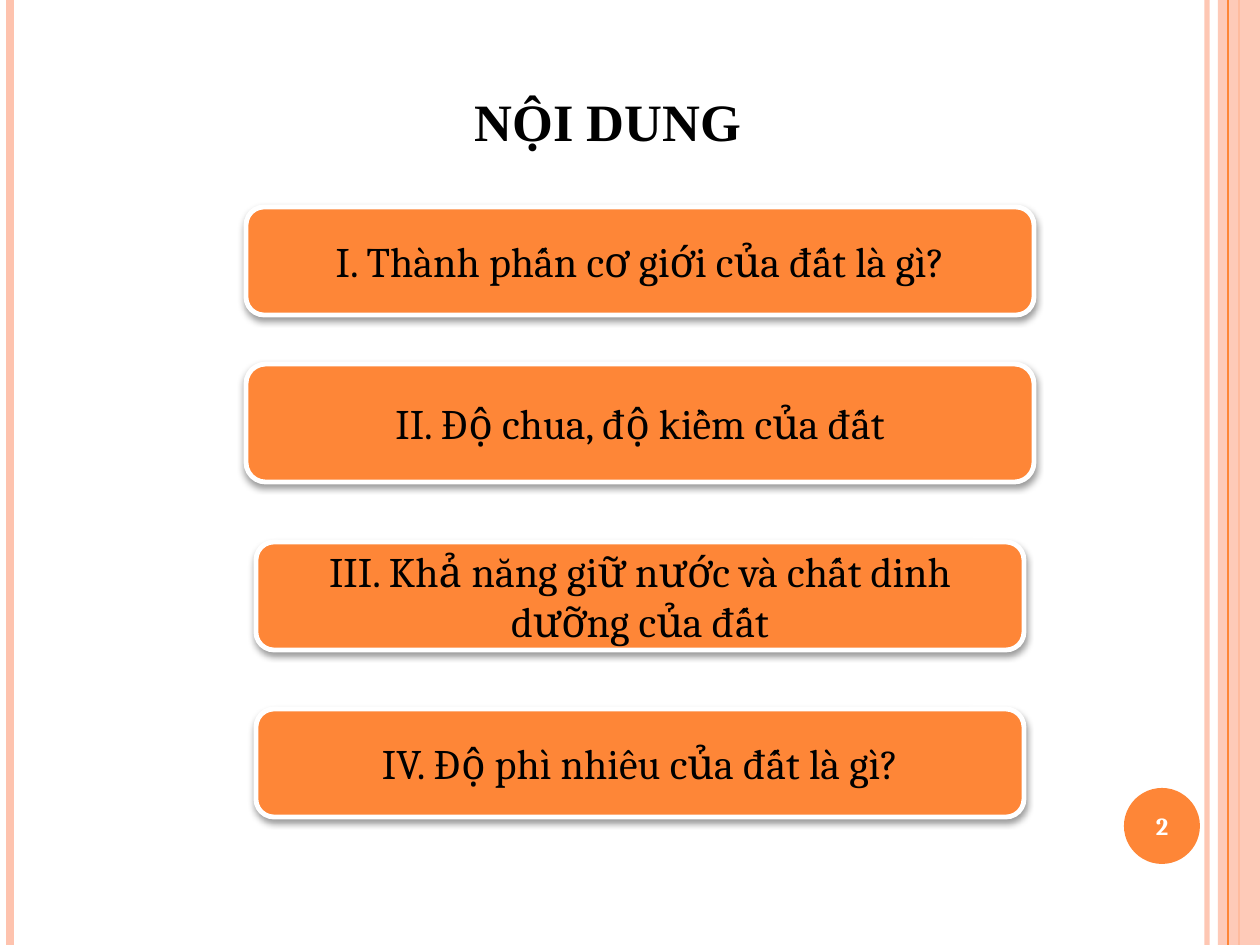
from lxml.etree import SubElement
from pptx import Presentation
from pptx.dml.color import RGBColor
from pptx.enum.shapes import MSO_CONNECTOR, MSO_SHAPE
from pptx.enum.text import MSO_ANCHOR, PP_ALIGN
from pptx.oxml import parse_xml
from pptx.oxml.ns import nsdecls, qn
from pptx.util import Pt

PX = 914400 / 126
WIDTH, HEIGHT = 1260, 945
COLORS = {"orange": "FE8637", "peach": "FEC3AE", "white": "FFFFFF", "black": "000000"}


def emu(*lengths):
    return [round(length * PX) for length in lengths]


def set_color(color_format, name, opacity=100):
    color_format.rgb = RGBColor.from_string(COLORS[name])
    if opacity < 100:
        # The srgbClr element is the only child of the solid fill
        solid = color_format._xFill
        SubElement(solid[0], qn("a:alpha"), val=str(opacity * 1000))


presentation = Presentation()
presentation.slide_width, presentation.slide_height = emu(WIDTH, HEIGHT)
slide = presentation.slides.add_slide(presentation.slide_layouts[5])
shapes = slide.shapes

# Vertical lines and the band on the right edge
band = shapes.add_shape(MSO_SHAPE.RECTANGLE, *emu(1218, 0, 42, HEIGHT))
band.shadow.inherit = False
band.fill.solid()
band.fill.fore_color.rgb = RGBColor.from_string(COLORS["peach"])
SubElement(band.fill._xPr.find(".//" + qn("a:srgbClr")), qn("a:alpha"), val="87000")
band.line.fill.background()

for x, color, width, opacity in [
    (1207, "peach", 3, 93),
    (10, "peach", 4.5, 100),
    (1239, "orange", 1.5, 100),
    (1228, "orange", 0.75, 100),
]:
    line = shapes.add_connector(MSO_CONNECTOR.STRAIGHT, *emu(x, 0, x, HEIGHT))
    line.line.width = Pt(width)
    line.line.color.rgb = RGBColor.from_string(COLORS[color])
    properties = line._element.spPr
    if opacity < 100:
        SubElement(properties.find(".//" + qn("a:srgbClr")), qn("a:alpha"), val=str(opacity * 1000))
    SubElement(properties, qn("a:effectLst"))
    if x == 1239:  # this line lies under the translucent band
        band._element.addprevious(line._element)

# Page number on its disc
disc = shapes.add_shape(MSO_SHAPE.OVAL, *emu(1124, 788, 76, 76))
disc.shadow.inherit = False
disc.fill.solid()
disc.fill.fore_color.rgb = RGBColor.from_string(COLORS["orange"])
disc.line.fill.background()

number = shapes.add_textbox(*emu(1120, 790, 84, 72))
number.text_frame.word_wrap = True
number.text_frame.vertical_anchor = MSO_ANCHOR.MIDDLE
paragraph = number.text_frame.paragraphs[0]
paragraph.text = "2"
paragraph.alignment = PP_ALIGN.CENTER
paragraph.font.name = "Cambria"
paragraph.font.size = Pt(14)
paragraph.font.bold = True
paragraph.font.color.rgb = RGBColor.from_string(COLORS["white"])

# Title
title = shapes.title
title.left, title.top, title.width, title.height = emu(462, 29, 508, 129)
title.text_frame.vertical_anchor = MSO_ANCHOR.BOTTOM
paragraph = title.text_frame.paragraphs[0]
paragraph.text = "NỘI DUNG"
paragraph.alignment = PP_ALIGN.LEFT
paragraph.font.name = "Times New Roman"
paragraph.font.size = Pt(30)
paragraph.font.bold = True
paragraph.font.color.rgb = RGBColor.from_string(COLORS["black"])

# Contents: boxes centred on one axis
CENTER = 640
for text, top, width, height in [
    ("I. Thành phấn cơ giới của đất là gì?", 207, 788, 108),
    ("II. Độ chua, độ kiềm của đất", 364, 788, 118),
    ("III. Khả năng giữ nước và chất dinh dưỡng của đất", 542, 768, 108),
    ("IV. Độ phì nhiêu của đất là gì?", 709, 768, 108),
]:
    box = shapes.add_shape(
        MSO_SHAPE.FLOWCHART_ALTERNATE_PROCESS, *emu(CENTER - width / 2, top, width, height)
    )
    box.fill.solid()
    box.fill.fore_color.rgb = RGBColor.from_string(COLORS["orange"])
    box.line.color.rgb = RGBColor.from_string(COLORS["white"])
    box.line.width = Pt(2.75)
    box._element.spPr.append(parse_xml(
        f'<a:effectLst {nsdecls("a")}>'
        f'<a:outerShdw blurRad="{Pt(4)}" dist="{Pt(2)}" dir="5400000" rotWithShape="0">'
        f'<a:srgbClr val="{COLORS["black"]}"><a:alpha val="40000"/></a:srgbClr>'
        "</a:outerShdw></a:effectLst>"
    ))
    box.text_frame.word_wrap = True
    box.text_frame.vertical_anchor = MSO_ANCHOR.MIDDLE
    paragraph = box.text_frame.paragraphs[0]
    paragraph.text = text
    paragraph.alignment = PP_ALIGN.CENTER
    paragraph.font.name = "Cambria"
    paragraph.font.size = Pt(24)
    paragraph.font.color.rgb = RGBColor.from_string(COLORS["black"])

presentation.save("out.pptx")
